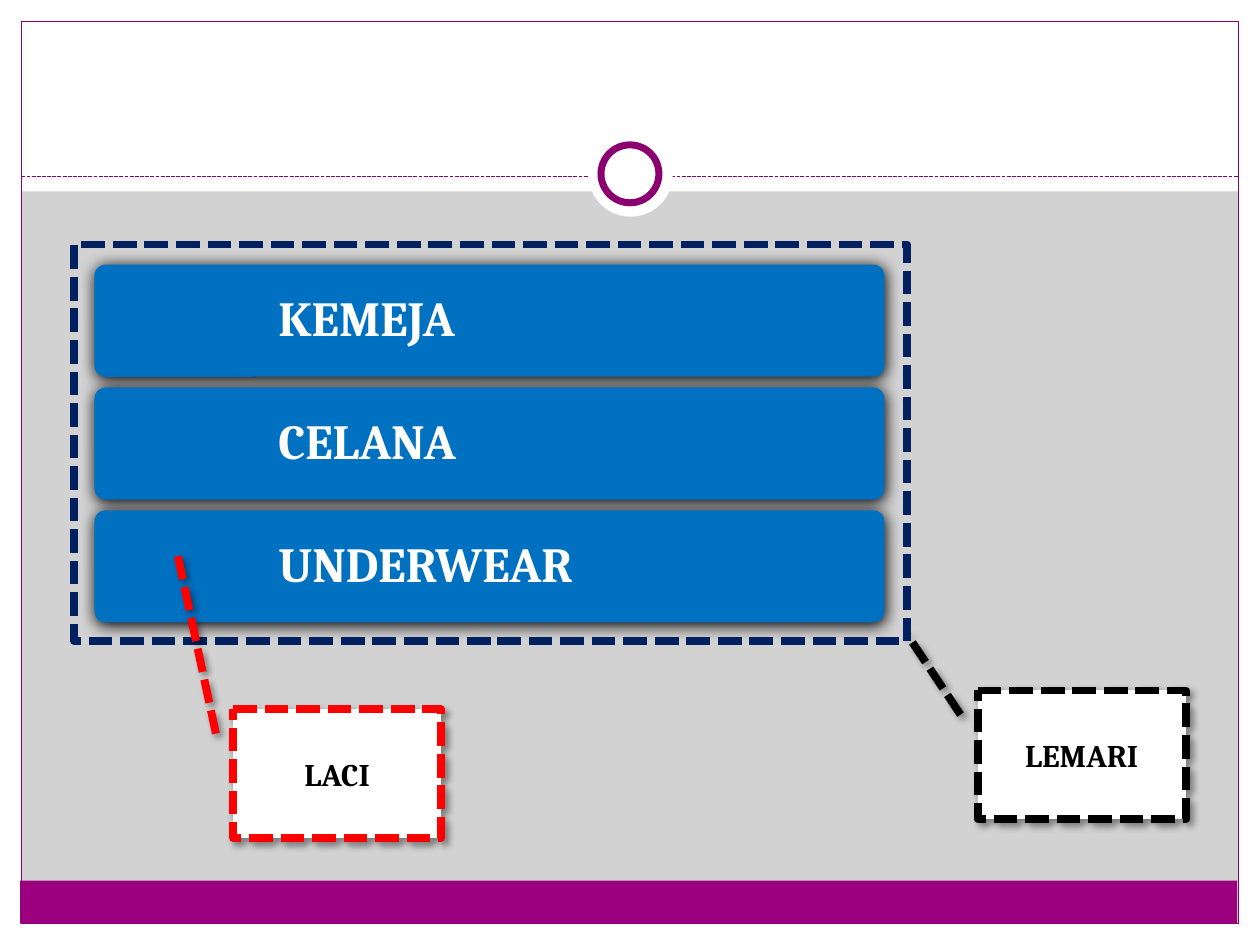
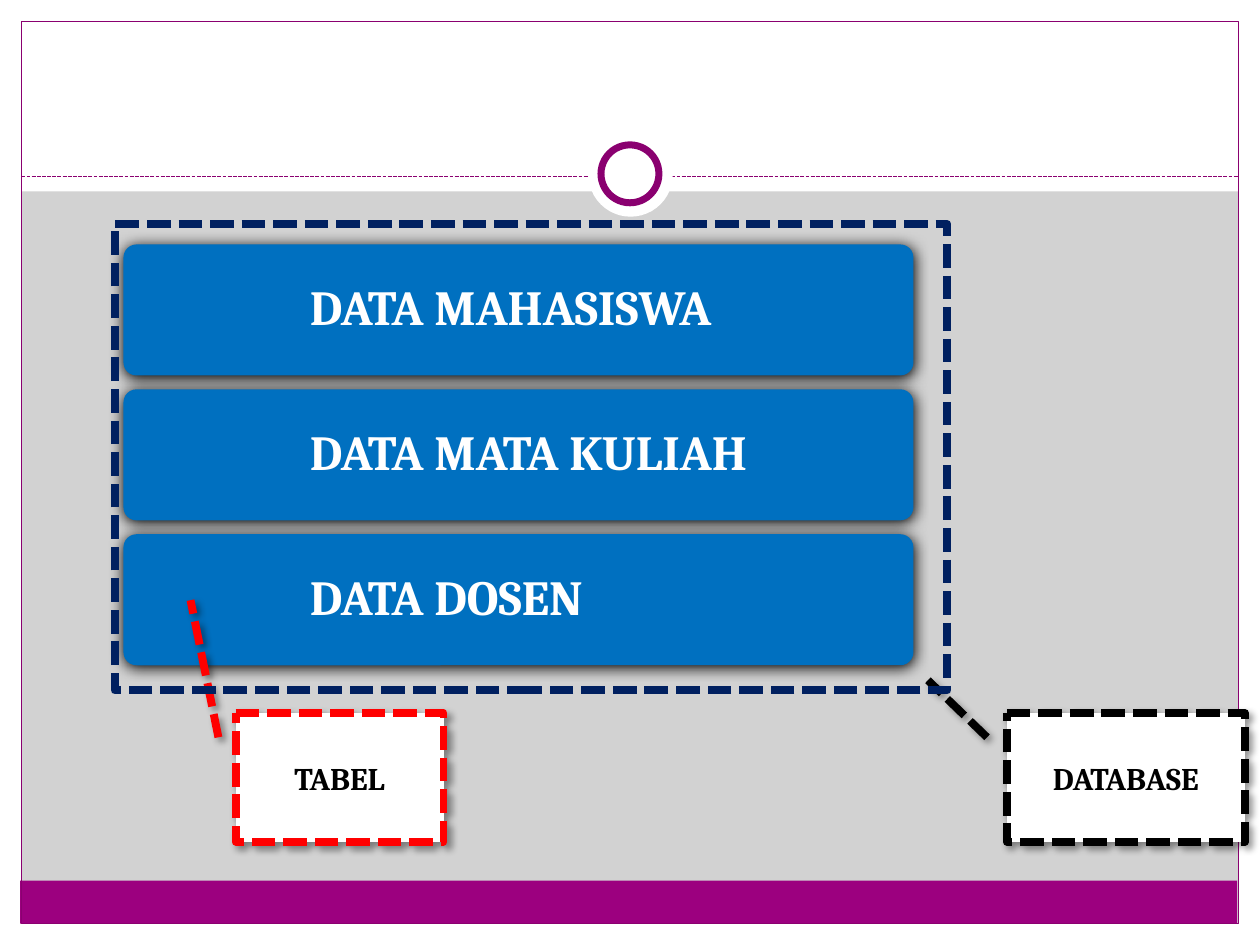
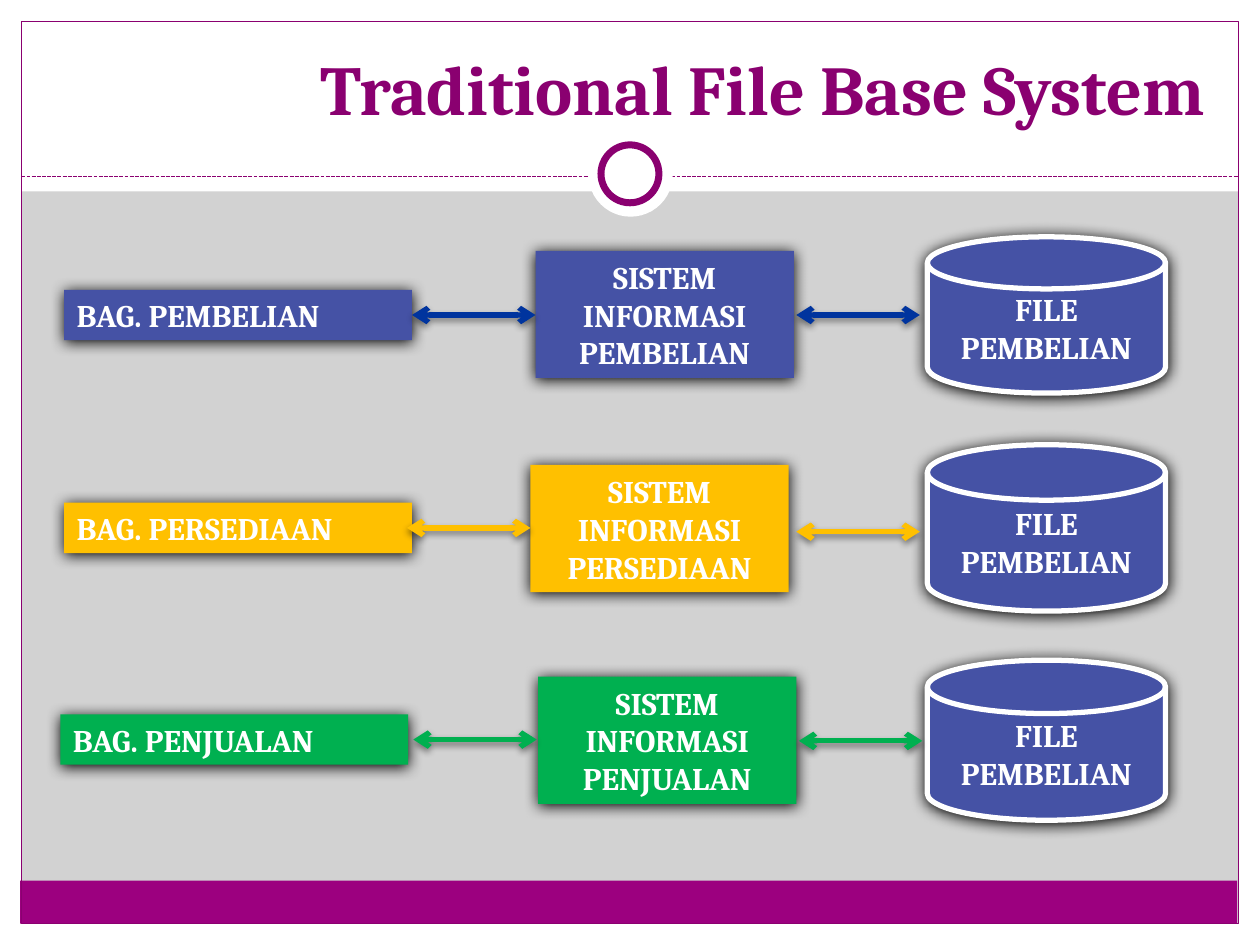
from dataclasses import dataclass

from lxml import etree
from pptx import Presentation
from pptx.dml.color import RGBColor
from pptx.enum.dml import MSO_LINE
from pptx.enum.shapes import MSO_CONNECTOR, MSO_SHAPE
from pptx.enum.text import MSO_ANCHOR, MSO_AUTO_SIZE, PP_ALIGN
from pptx.oxml.ns import qn
from pptx.util import Inches, Pt

RECT, ROUND, OVAL = MSO_SHAPE.RECTANGLE, MSO_SHAPE.ROUNDED_RECTANGLE, MSO_SHAPE.OVAL
NOTE, DISK = MSO_SHAPE.LINE_CALLOUT_1, MSO_SHAPE.FLOWCHART_MAGNETIC_DISK
STRAIGHT = MSO_CONNECTOR.STRAIGHT
DASH = MSO_LINE.SQUARE_DOT
LEFT, MID, RIGHT = PP_ALIGN.LEFT, PP_ALIGN.CENTER, PP_ALIGN.RIGHT
MIDDLE, BOTTOM = MSO_ANCHOR.MIDDLE, MSO_ANCHOR.BOTTOM
FIXED = MSO_AUTO_SIZE.NONE


@dataclass(frozen=True)
class Theme:
    font: str = "Cambria"
    back: str = "D2D2D2"
    white: str = "FFFFFF"
    black: str = "000000"
    plum: str = "8A0070"
    band: str = "9C007F"
    blue: str = "0070C0"
    navy: str = "002060"
    red: str = "FF0000"
    slate: str = "4552A5"
    royal: str = "00349E"
    gold: str = "FFC000"
    green: str = "00B050"
    head: int = 40
    large: int = 28
    small: int = 18


T = Theme()
# Shadows: blur and distance in points, angle in degrees, opacity in percent
GLOW, DROP, SOFT = (8.5, 1, 90, 100), (4, 3, 45, 40), (4, 2, 90, 45)


def style(item, line=None, shade=None):
    """Set the outline (colour, width, dash) and the shadow."""
    if line:
        tint, width, dash = line
        item.line.color.rgb = RGBColor.from_string(tint)
        item.line.width = Pt(width)
        item.line.dash_style = dash
    else:
        item.line.fill.background()
    fx = etree.SubElement(item.element.spPr, qn("a:effectLst"))
    if shade:
        blur, dist, angle, alpha = shade
        outer = etree.SubElement(
            fx, qn("a:outerShdw"), blurRad=str(Pt(blur)), dist=str(Pt(dist)),
            dir=str(angle * 60000), algn="ctr", rotWithShape="0")
        tint = etree.SubElement(outer, qn("a:srgbClr"), val=T.black)
        etree.SubElement(tint, qn("a:alpha"), val=str(alpha * 1000))


def draw(slide, kind, box, fill=None, line=None, shade=None,
         text="", tint=T.white, align=MID):
    """Add a preset shape, with a label if there is one."""
    shape = slide.shapes.add_shape(kind, *map(Inches, box))
    if fill:
        shape.fill.solid()
        shape.fill.fore_color.rgb = RGBColor.from_string(fill)
    else:
        shape.fill.background()
    style(shape, line, shade)
    if text:
        para = shape.text_frame.paragraphs[0]
        para.alignment = align
        run = para.add_run()
        run.text = text
        run.font.name, run.font.size, run.font.bold = T.font, Pt(T.small), True
        run.font.color.rgb = RGBColor.from_string(tint)
    return shape


deck = Presentation()
deck.slide_width, deck.slide_height = Inches(10), Inches(7.5)
master = deck.slide_master
master.background.fill.solid()
master.background.fill.fore_color.rgb = RGBColor.from_string(T.back)

# Shared frame, built on a slide and then moved to the master
blank = deck.slide_layouts[6]
slide = deck.slides.add_slide(blank)
plates = [draw(slide, *row) for row in (
    (RECT, (0, 7.33, 10, 0.17), T.white),
    (RECT, (0, 0, 10, 1.52), T.white),
    (RECT, (0, 0, 0.17, 7.5), T.white),
    (RECT, (9.83, 0, 0.17, 7.5), T.white),
    (RECT, (0.16, 6.99, 9.66, 0.34), T.band),
    (RECT, (0.17, 0.17, 9.66, 7.16), None, (T.plum, 0.75, None)),
    (OVAL, (4.67, 1.05, 0.67, 0.67), T.white),
    (OVAL, (4.77, 1.15, 0.46, 0.46), T.white, (T.plum, 4, None)),
)]
rule = slide.shapes.add_connector(
    STRAIGHT, *map(Inches, (0.17, 1.4, 9.83, 1.4)))
style(rule, (T.plum, 0.75, DASH))
plates.insert(-2, rule)
for spot, plate in enumerate(plates, 2):
    master.shapes.element.insert(spot, plate.element)

# Slides 1 and 2: stacked drawers with callouts
stacks = (
    (slide, ("KEMEJA", "CELANA", "UNDERWEAR"), (0.75, 2.1, 0.89, 0.975), 1.34, (
        (NOTE, (7.76, 5.48, 1.65, 1.02), T.black, "LEMARI", (-0.441, -0.342)),
        (RECT, (0.59, 1.94, 6.61, 3.15), T.navy, "", ()),
        (NOTE, (1.85, 5.63, 1.65, 1.02), T.red, "LACI", (-1.216, -0.269)))),
    (deck.slides.add_slide(blank),
     ("DATA MAHASISWA", "DATA MATA KULIAH", "DATA DOSEN"),
     (0.98, 1.94, 1.04, 1.15), 1.36, (
        (NOTE, (7.99, 5.66, 1.89, 1.02), T.black, "DATABASE", (-0.256, -0.331)),
        (NOTE, (1.87, 5.66, 1.65, 1.02), T.red, "TABEL", (-0.879, -0.217)),
        (RECT, (0.91, 1.78, 6.61, 3.7), T.navy, "", ()))),
)
for slide, names, (left, top, high, step), shift, notes in stacks:
    for i, name in enumerate(names):
        y = top + i * step
        bar = draw(slide, ROUND, (left, y, 6.27, high), T.blue, None, GLOW)
        bar.adjustments[0] = 0.1
        label = slide.shapes.add_textbox(
            *map(Inches, (left + shift, y, 6.27 - shift, high)))
        frame = label.text_frame
        frame.word_wrap = True
        frame.vertical_anchor = MIDDLE
        frame.margin_left = frame.margin_right = Inches(0.12)
        frame.margin_top = frame.margin_bottom = Inches(0.12)
        para = frame.paragraphs[0]
        para.line_spacing = 0.9
        run = para.add_run()
        run.text = name
        run.font.name, run.font.size, run.font.bold = T.font, Pt(T.large), True
        run.font.color.rgb = RGBColor.from_string(T.white)
    for kind, box, tint, text, tip in notes:
        fill, shade = (T.white, DROP) if text else (None, None)
        note = draw(slide, kind, box, fill, (tint, 4.5, DASH), shade, text, T.black)
        if tip:
            for i, value in enumerate((0.188, -0.083, *tip)):
                note.adjustments[i] = value

# Slide 3: title
slide = deck.slides.add_slide(deck.slide_layouts[5])
title = slide.shapes.title
title.left, title.top = Inches(0.33), Inches(0.25)
title.width, title.height = Inches(9.33), Inches(0.83)
frame = title.text_frame
frame.auto_size = FIXED
frame.vertical_anchor = BOTTOM
para = frame.paragraphs[0]
para.alignment = RIGHT
run = para.add_run()
run.text = "Traditional File Base System"
run.font.name, run.font.size, run.font.bold = T.font, Pt(T.head), True
run.font.color.rgb = RGBColor.from_string(T.plum)

# Slide 3: one row per department, from unit to system to file
flows = (
    ("PEMBELIAN", T.slate, T.royal, (0.51, 2.3), (4.25, 1.99), (1.88, 1.24),
     ((3.27, 2.5), (6.32, 2.5))),
    ("PERSEDIAAN", T.gold, T.gold, (0.51, 3.99), (4.21, 3.69), (3.53, 1.32),
     ((3.23, 4.19), (6.32, 4.22))),
    ("PENJUALAN", T.green, T.green, (0.48, 5.67), (4.27, 5.37), (5.24, 1.27),
     ((3.28, 5.87), (6.34, 5.88))),
)
for name, fill, tint, unit, system, (top, high), links in flows:
    draw(slide, RECT, (*unit, 2.76, 0.4), fill, None, GLOW,
         "BAG. " + name, align=LEFT)
    draw(slide, RECT, (*system, 2.05, 1.01), fill, None, GLOW,
         "SISTEM INFORMASI " + name)
    draw(slide, DISK, (7.36, top, 1.89, high), T.slate, (T.white, 3, None), GLOW,
         "FILE PEMBELIAN")
    for x, y in links:
        link = slide.shapes.add_connector(
            STRAIGHT, *map(Inches, (x, y, x + 0.98, y)))
        style(link, (tint, 3, None), SOFT)
        for end in ("a:headEnd", "a:tailEnd"):
            etree.SubElement(link.get_or_add_ln(), qn(end), type="arrow")

deck.save("out.pptx")
